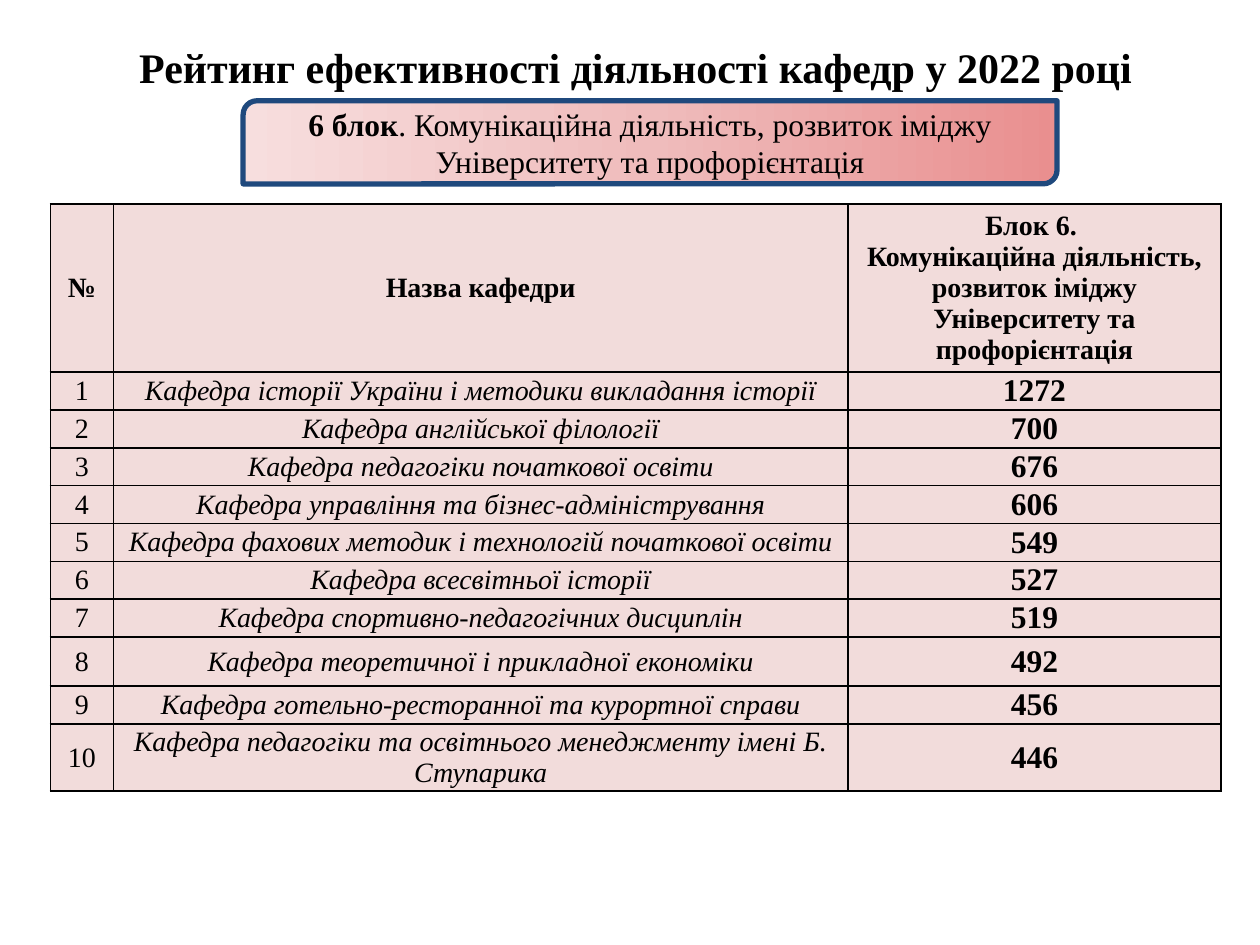
from copy import deepcopy

from lxml import etree
from pptx import Presentation
from pptx.dml.color import RGBColor
from pptx.enum.shapes import MSO_SHAPE
from pptx.enum.text import MSO_ANCHOR, PP_ALIGN
from pptx.oxml.ns import qn
from pptx.util import Inches, Pt

CENTER = PP_ALIGN.CENTER
MIDDLE = MSO_ANCHOR.MIDDLE
ROUND_DIAGONAL = MSO_SHAPE.ROUND_2_DIAG_RECTANGLE

FONT = "Times New Roman"
COLORS = {"text": "000000", "border": "000000", "cell": "F2DCDB", "outline": "1F497D"}
GRADIENT = [(0, "E98F8F"), (0.5, "EFBCBC"), (1, "F7DEDE")]

HEADERS = ["№", "Назва кафедри",
           "Блок 6. \nКомунікаційна діяльність, розвиток іміджу Університету та профорієнтація"]
RATING = [
    ("Кафедра історії України і методики викладання історії", 1272),
    ("Кафедра англійської філології", 700),
    ("Кафедра педагогіки початкової освіти", 676),
    ("Кафедра управління та бізнес-адміністрування", 606),
    ("Кафедра фахових методик і технологій початкової освіти", 549),
    ("Кафедра всесвітньої історії", 527),
    ("Кафедра спортивно-педагогічних дисциплін", 519),
    ("Кафедра теоретичної і прикладної економіки", 492),
    ("Кафедра готельно-ресторанної та курортної справи", 456),
    ("Кафедра педагогіки та освітнього менеджменту імені Б. Ступарика", 446),
]
COL_WIDTHS = [0.5, 5.83, 2.96]
ROW_HEIGHTS = [1.33] + [0.3] * 7 + [0.39, 0.3, 0.53]


def style(p, size, bold=None, italic=None):
    p.alignment = CENTER
    p.font.name = FONT
    p.font.size = Pt(size)
    p.font.bold = bold
    p.font.italic = italic
    p.font.color.rgb = RGBColor.from_string(COLORS["text"])


def add_borders(cell):
    tcPr = cell._tc.get_or_add_tcPr()
    for i, side in enumerate(("a:lnL", "a:lnR", "a:lnT", "a:lnB")):
        ln = etree.Element(qn(side), w=str(Pt(1)))
        fill = etree.SubElement(ln, qn("a:solidFill"))
        etree.SubElement(fill, qn("a:srgbClr"), val=COLORS["border"])
        tcPr.insert(i, ln)


prs = Presentation()
prs.slide_width, prs.slide_height = Inches(10), Inches(7.5)
s = prs.slides.add_slide(prs.slide_layouts[6])

# Title
tf = s.shapes.add_textbox(Inches(0.63), Inches(0.28), Inches(8.83), Inches(0.5)).text_frame
tf.word_wrap = True
p = tf.paragraphs[0]
p.text = "Рейтинг ефективності діяльності кафедр у 2022 році"
style(p, 24, bold=True)

# Block banner with a three-stop gradient
sp = s.shapes.add_shape(ROUND_DIAGONAL, Inches(1.93), Inches(0.8), Inches(6.46), Inches(0.66))
sp.shadow.inherit = False
sp.line.color.rgb = RGBColor.from_string(COLORS["outline"])
sp.line.width = Pt(3)
sp.fill.gradient()
sp.fill.gradient_angle = 180
stops = sp._element.spPr.find(qn("a:gradFill")).find(qn("a:gsLst"))
stops.insert(1, deepcopy(stops[0]))
for stop, (position, color) in zip(sp.fill.gradient_stops, GRADIENT):
    stop.position = position
    stop.color.rgb = RGBColor.from_string(color)
tf = sp.text_frame
tf.word_wrap = True
tf.vertical_anchor = MIDDLE
p = tf.paragraphs[0]
style(p, 18)
r = p.add_run()
r.text = "6 блок"
r.font.bold = True
r = p.add_run()
r.text = ". Комунікаційна діяльність, розвиток іміджу Університету та профорієнтація"

# Rating table
rows = [HEADERS] + [(str(n), name, str(score)) for n, (name, score) in enumerate(RATING, 1)]
table = s.shapes.add_table(len(rows), len(HEADERS), Inches(0.4), Inches(1.62),
                           Inches(sum(COL_WIDTHS)), Inches(sum(ROW_HEIGHTS))).table
table.first_row = table.horz_banding = False
for column, width in zip(table.columns, COL_WIDTHS):
    column.width = Inches(width)
for row, height in zip(table.rows, ROW_HEIGHTS):
    row.height = Inches(height)

for i, values in enumerate(rows):
    for j, value in enumerate(values):
        cell = table.cell(i, j)
        cell.fill.solid()
        cell.fill.fore_color.rgb = RGBColor.from_string(COLORS["cell"])
        cell.vertical_anchor = MIDDLE
        cell.margin_left = cell.margin_right = Inches(0.03)
        cell.margin_top = cell.margin_bottom = 0
        add_borders(cell)
        header, score = i == 0, j == 2
        p = cell.text_frame.paragraphs[0]
        p.text = value
        style(p, 18 if score and not header else 16,
              bold=header or score, italic=j == 1 and not header)

prs.save("out.pptx")
